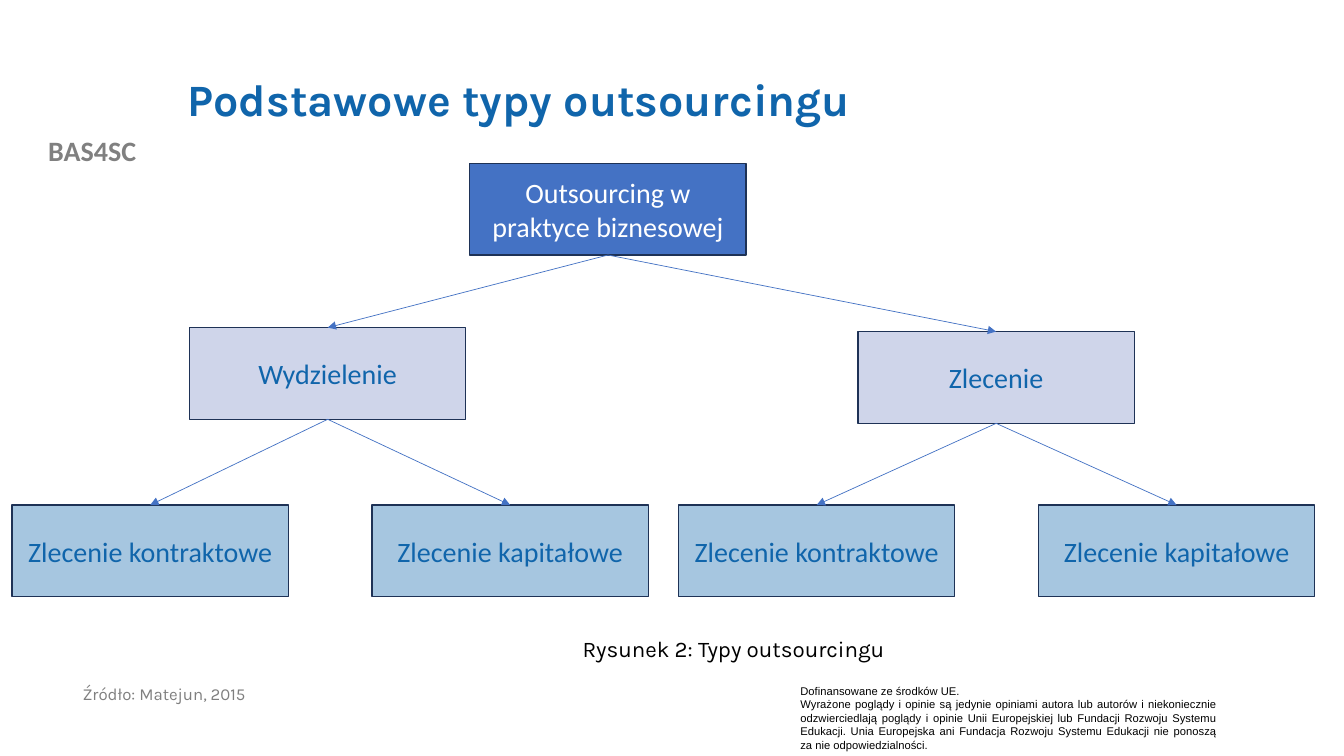
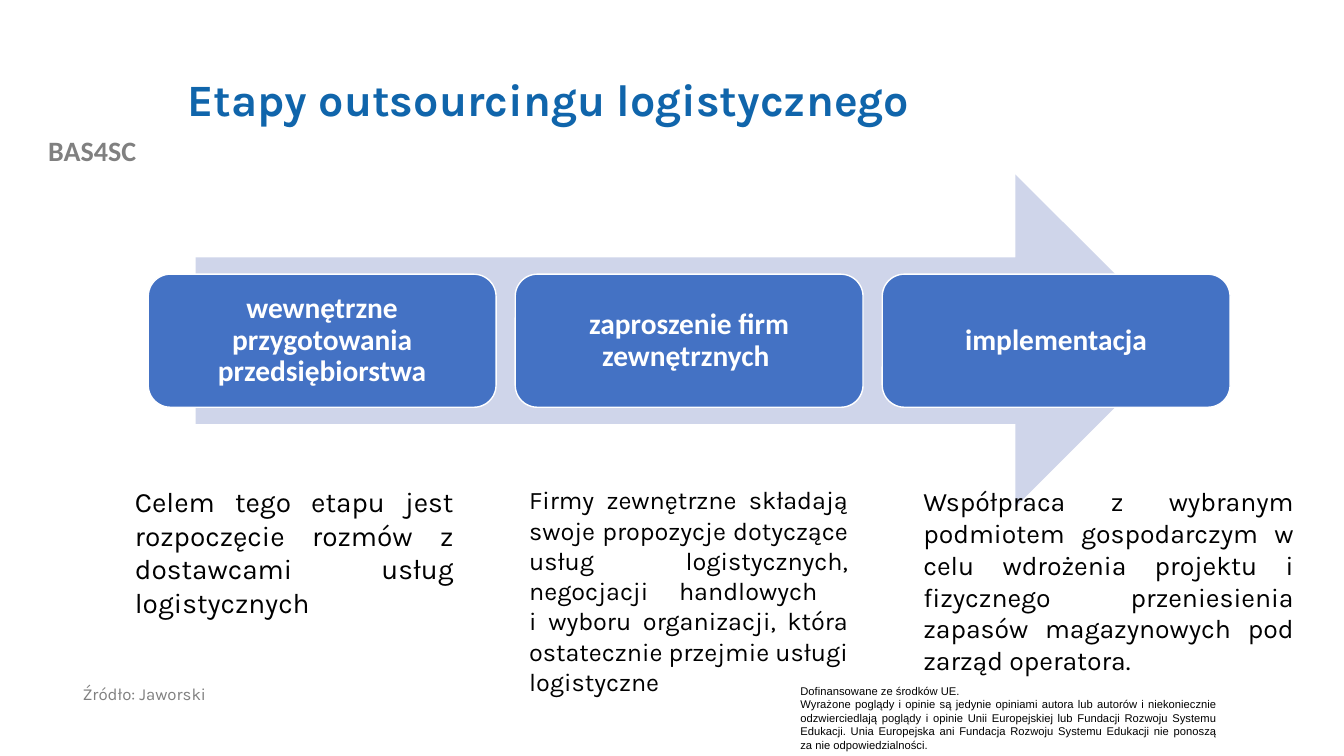
from lxml import etree
from pptx import Presentation
from pptx.dml.color import RGBColor
from pptx.enum import shapes, text
from pptx.oxml.ns import qn
from pptx.util import Inches, Pt

BLUE, NAVY, TITLE_BLUE = "4472C4", "1E3256", "1065AB"
PALE, SKY, WHITE, BLACK = "CFD5EA", "A6C6E0", "FFFFFF", "000000"
LEFT, CENTER, JUSTIFY = text.PP_ALIGN.LEFT, text.PP_ALIGN.CENTER, text.PP_ALIGN.JUSTIFY

TITLE = dict(name="Karla", size=Pt(32), bold=True)
PROJECT = dict(name="Calibri", size=Pt(20), bold=True)
DISCLAIMER = dict(name="Arial", size=Pt(8))
SOURCE = dict(name="Karla", size=Pt(12))
CAPTION = dict(name="Karla", size=Pt(16))
NODE = dict(name="Calibri", size=Pt(20))
STAGE = dict(name="Calibri", size=Pt(21), bold=True)


def write(shape, paragraphs, font, color, align=LEFT, spacing=None,
          anchor=text.MSO_ANCHOR.TOP):
    """Fill a shape with equally formatted paragraphs."""
    frame = shape.text_frame
    frame.word_wrap = True
    frame.auto_size = text.MSO_AUTO_SIZE.NONE
    frame.vertical_anchor = anchor
    for number, words in enumerate(paragraphs):
        paragraph = frame.add_paragraph() if number else frame.paragraphs[0]
        paragraph.text = words
        paragraph.alignment = align
        paragraph.line_spacing = spacing
        for run in paragraph.runs:
            for key, value in font.items():
                setattr(run.font, key, value)
            run.font.color.rgb = RGBColor.from_string(color)
    return frame


def add_block(slide, preset, box, fill, line=None):
    block = slide.shapes.add_shape(preset, *map(Inches, box))
    block.shadow.inherit = False
    block.fill.solid()
    block.fill.fore_color.rgb = RGBColor.from_string(fill)
    if line:
        block.line.color.rgb = RGBColor.from_string(line)
        block.line.width = Pt(1)
    else:
        block.line.fill.background()
    return block


prs = Presentation()
prs.slide_width, prs.slide_height = Inches(13.33), Inches(7.5)
layout = prs.slide_layouts[5]

# Titles and source lines
slides = []
for title, source in [
    ("Podstawowe typy outsourcingu", "Źródło: Matejun, 2015"),
    ("Etapy outsourcingu logistycznego", "Źródło: Jaworski"),
]:
    slide = prs.slides.add_slide(layout)
    heading = slide.shapes.title
    heading.left, heading.top = Inches(1.76), Inches(0.4)
    heading.width, heading.height = Inches(10.66), Inches(1.22)
    write(heading, [title], TITLE, TITLE_BLUE, spacing=0.9, anchor=text.MSO_ANCHOR.MIDDLE)
    credit = slide.shapes.add_textbox(Inches(0.72), Inches(6.76), Inches(5.01), Inches(0.52))
    write(credit, [source], SOURCE, "7F7F7F", spacing=0.9)
    slides.append(slide)
types_slide, stages_slide = slides

# Project name and disclaimer belong to the layout
project = types_slide.shapes.add_textbox(0, Inches(1.28), Inches(1.83), Inches(0.44))
write(project, ["BAS4SC"], PROJECT, "808080", CENTER)
disclaimer = types_slide.shapes.add_textbox(Inches(7.84), Inches(6.74), Inches(4.33), Inches(0.77))
write(disclaimer, [
    "Dofinansowane ze środków UE.",
    "Wyrażone poglądy i opinie są jedynie opiniami autora lub autorów i niekoniecznie "
    "odzwierciedlają poglądy i opinie Unii Europejskiej lub Fundacji Rozwoju Systemu "
    "Edukacji. Unia Europejska ani Fundacja Rozwoju Systemu Edukacji nie ponoszą za "
    "nie odpowiedzialności.",
], DISCLAIMER, BLACK, JUSTIFY)
for shared in (project, disclaimer):
    layout.element.cSld.spTree.append(shared.element)

# Slide 1: tree of outsourcing types
NODE_W, NODE_H, LEAF_TOP = 2.74, 0.91, 5.01
LEAVES = ["Zlecenie kontraktowe", "Zlecenie kapitałowe"]
tree = [  # words, left, top, fill, text colour, index of parent
    ("Outsourcing w praktyce biznesowej", 4.66, 1.62, BLUE, WHITE, None),
    ("Wydzielenie", 1.88, 3.25, PALE, TITLE_BLUE, 0),
    ("Zlecenie", 8.51, 3.29, PALE, TITLE_BLUE, 0),
]
for parent, first_left in [(1, 0.12), (2, 6.73)]:
    for column, leaf in enumerate(LEAVES):
        tree.append((leaf, first_left + 3.57 * column, LEAF_TOP, SKY, TITLE_BLUE, parent))

nodes = []
for words, left, top, fill, color, parent in tree:
    node = add_block(types_slide, shapes.MSO_SHAPE.RECTANGLE,
                     (left, top, NODE_W, NODE_H), fill, NAVY)
    write(node, [words], NODE, color, CENTER, anchor=text.MSO_ANCHOR.MIDDLE)
    nodes.append(node)
    if parent is None:
        continue
    branch = types_slide.shapes.add_connector(shapes.MSO_CONNECTOR.STRAIGHT, 0, 0, 0, 0)
    branch.begin_connect(nodes[parent], 2)
    branch.end_connect(node, 0)
    branch.line.color.rgb = RGBColor.from_string(BLUE)
    branch.line.width = Pt(0.5)
    properties = branch.element.spPr
    etree.SubElement(properties.find(qn("a:ln")), qn("a:tailEnd"), type="triangle")
    etree.SubElement(properties, qn("a:effectLst"))

caption = types_slide.shapes.add_textbox(Inches(5.08), Inches(6.25), Inches(4.39), Inches(0.37))
write(caption, ["Rysunek 2: Typy outsourcingu"], CAPTION, BLACK, CENTER)

# Slide 2: stages on an arrow, each with its description
add_block(stages_slide, shapes.MSO_SHAPE.RIGHT_ARROW, (1.94, 1.73, 9.78, 3.3), PALE)
stages = [  # stage, description, its size, its width
    ("wewnętrzne przygotowania przedsiębiorstwa",
     "Celem tego etapu jest rozpoczęcie rozmów z dostawcami usług logistycznych", 20, 3.36),
    ("zaproszenie firm zewnętrznych ",
     "Firmy zewnętrzne składają swoje propozycje dotyczące usług logistycznych, negocjacji "
     "handlowych \ni wyboru organizacji, która ostatecznie przejmie usługi logistyczne", 18, 3.36),
    ("implementacja",
     "Współpraca z wybranym podmiotem gospodarczym w celu wdrożenia projektu i fizycznego "
     "przeniesienia zapasów magazynowych pod zarząd operatora.", 19, 3.87),
]
for column, (stage, description, size, width) in enumerate(stages):
    step = add_block(stages_slide, shapes.MSO_SHAPE.ROUNDED_RECTANGLE,
                     (1.47 + 3.64 * column, 2.72, 3.45, 1.32), BLUE, WHITE)
    frame = write(step, [stage], STAGE, WHITE, CENTER, 0.9, text.MSO_ANCHOR.MIDDLE)
    for side in ("left", "top", "right", "bottom"):
        setattr(frame, f"margin_{side}", Inches(0.09))
    details = stages_slide.shapes.add_textbox(
        Inches(1.24 + 3.91 * column), Inches(4.76), Inches(width), Inches(2.02))
    write(details, [description], dict(name="Karla", size=Pt(size)), BLACK, JUSTIFY)

prs.save("out.pptx")
